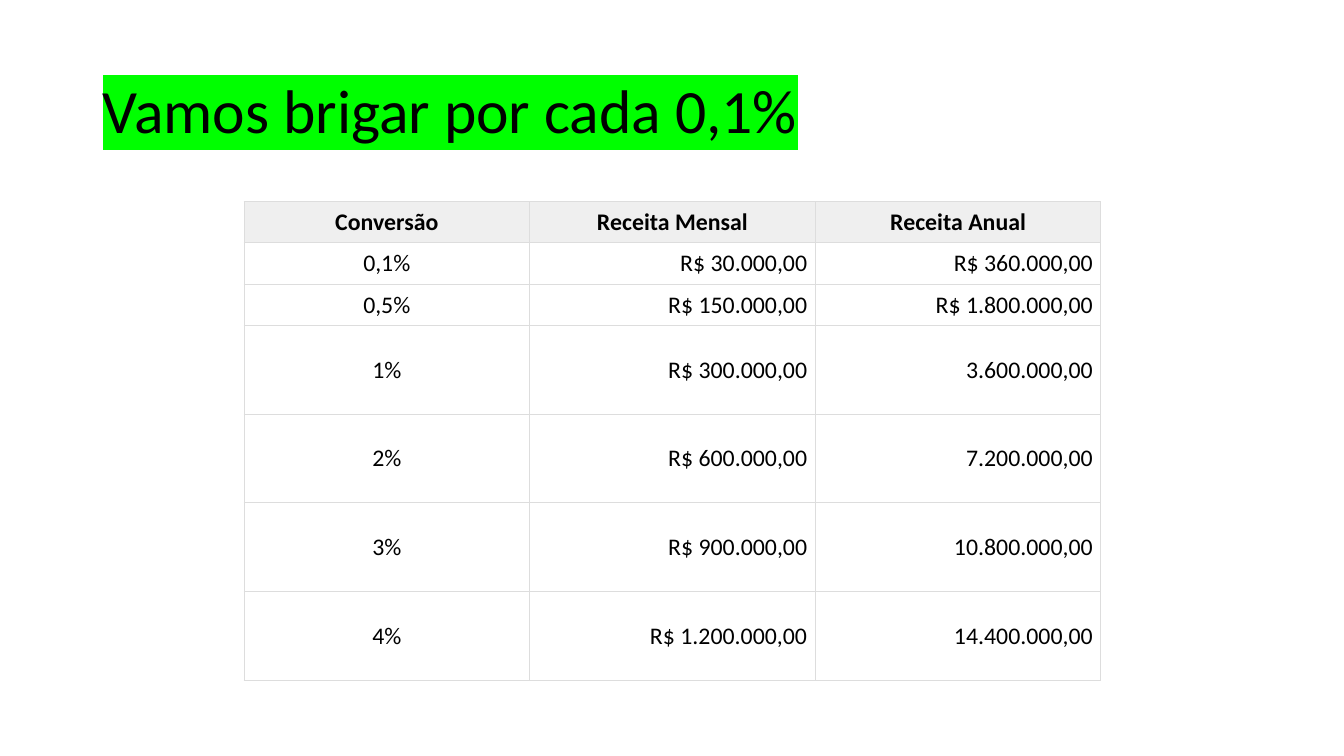
from dataclasses import dataclass

from lxml import etree
from pptx import Presentation
from pptx import util as u
from pptx.dml.color import RGBColor
from pptx.enum import text
from pptx.oxml import parse_xml
from pptx.oxml.ns import nsdecls, qn


@dataclass(frozen=True)
class Theme:
    font: str = "Calibri"
    ink: str = "000000"
    highlight: str = "00FF00"
    header_fill: str = "EFEFEF"
    body_fill: str = "FFFFFF"
    border: str = "DDDDDD"
    border_pt: float = 0.75
    title_pt: int = 44
    table_pt: int = 17


theme = Theme()


def style(font, size):
    font.name = theme.font
    font.size = u.Pt(size)
    font.color.rgb = RGBColor.from_string(theme.ink)


def add_borders(cell):
    tc_pr = cell._tc.get_or_add_tcPr()
    for side in ("lnL", "lnR", "lnT", "lnB"):
        tc_pr.append(parse_xml(
            f'<a:{side} {nsdecls("a")} w="{u.Pt(theme.border_pt)}"><a:solidFill>'
            f'<a:srgbClr val="{theme.border}"/></a:solidFill></a:{side}>'))


prs = Presentation()
prs.slide_width, prs.slide_height = u.Inches(13.33), u.Inches(7.5)
s = prs.slides.add_slide(prs.slide_layouts[6])

# Title
title = s.shapes.add_textbox(u.Inches(0.92), u.Inches(0.4), u.Inches(11.5), u.Inches(1.45))
tf = title.text_frame
tf.word_wrap = True
tf.vertical_anchor = text.MSO_ANCHOR.MIDDLE
p = tf.paragraphs[0]
p.line_spacing = 0.9
r = p.add_run()
r.text = "Vamos brigar por cada 0,1%"
style(r.font, theme.title_pt)
highlight = etree.Element(qn("a:highlight"))
etree.SubElement(highlight, qn("a:srgbClr"), val=theme.highlight)
r.font._element.find(qn("a:solidFill")).addnext(highlight)

# Revenue table
rows = [
    ("Conversão", "Receita Mensal", "Receita Anual"),
    ("0,1%", "R$ 30.000,00", "R$ 360.000,00"),
    ("0,5%", "R$ 150.000,00", "R$ 1.800.000,00"),
    ("1%", "R$ 300.000,00", "3.600.000,00"),
    ("2%", "R$ 600.000,00", "7.200.000,00"),
    ("3%", "R$ 900.000,00", "10.800.000,00"),
    ("4%", "R$ 1.200.000,00", "14.400.000,00"),
]
row_heights = [0.41] * 3 + [0.88] * 4
table = s.shapes.add_table(len(rows), len(rows[0]), u.Inches(2.42), u.Inches(2),
                           u.Inches(8.5), u.Inches(sum(row_heights))).table
table.horz_banding = False

for i, (values, height) in enumerate(zip(rows, row_heights)):
    table.rows[i].height = u.Inches(height)
    is_header = i == 0
    fill = theme.header_fill if is_header else theme.body_fill
    for j, value in enumerate(values):
        cell = table.cell(i, j)
        cell.text = value
        cell.vertical_anchor = text.MSO_ANCHOR.MIDDLE
        cell.margin_left = cell.margin_right = u.Inches(0.08)
        cell.margin_top = cell.margin_bottom = u.Inches(0.06)
        add_borders(cell)
        cell.fill.solid()
        cell.fill.fore_color.rgb = RGBColor.from_string(fill)
        p = cell.text_frame.paragraphs[0]
        centred = is_header or j == 0
        p.alignment = text.PP_ALIGN.CENTER if centred else text.PP_ALIGN.RIGHT
        style(p.font, theme.table_pt)
        p.font.bold = is_header

prs.save("out.pptx")
